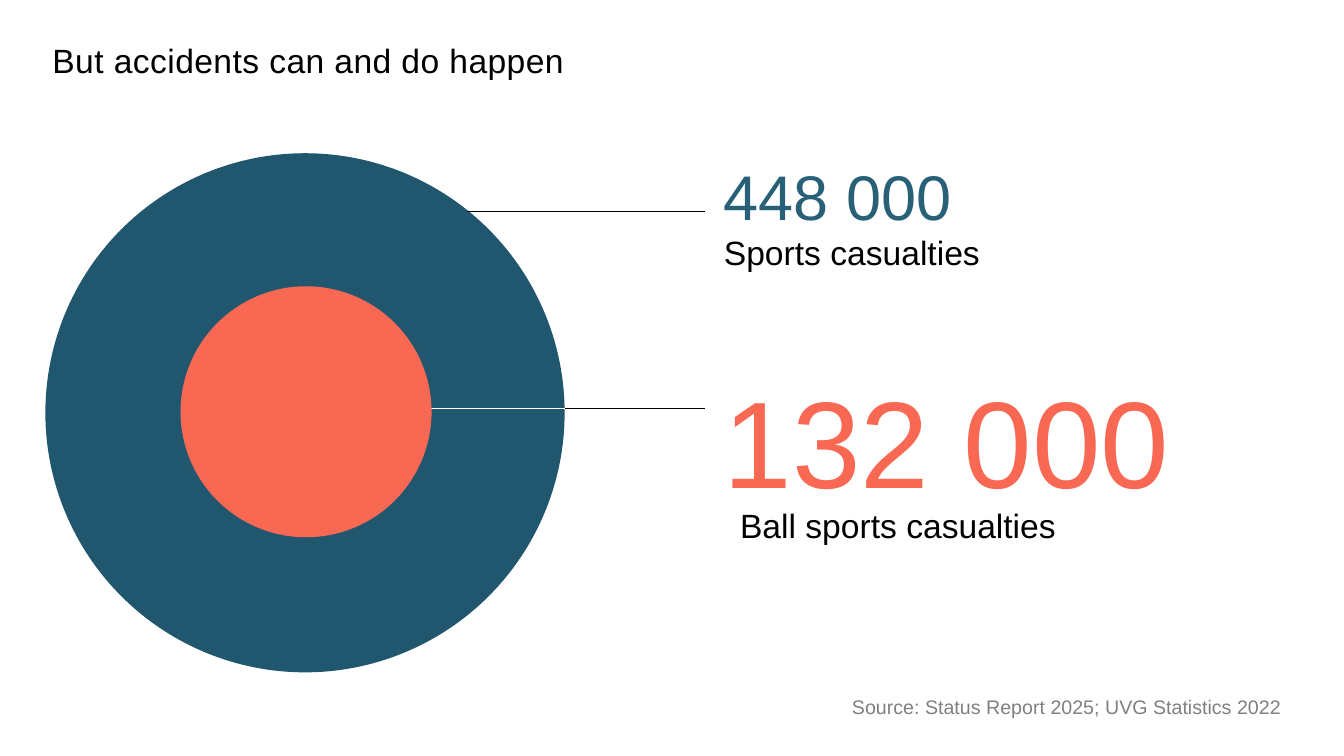
from lxml import etree
from pptx import Presentation
from pptx import util as u
from pptx.dml.color import RGBColor
from pptx.enum import shapes, text
from pptx.oxml.ns import qn

BLACK = RGBColor(0x00, 0x00, 0x00)
WHITE = RGBColor(0xFF, 0xFF, 0xFF)
GRAY = RGBColor(0x80, 0x80, 0x80)
TEAL = RGBColor(0x20, 0x56, 0x6E)
BLUE = RGBColor(0x28, 0x60, 0x78)
CORAL = RGBColor(0xF8, 0x68, 0x52)


class Canvas:
    font = "Arial"

    def __init__(self, slide):
        self.slide = slide

    def disc(self, left, top, size, color):
        disc = self.slide.shapes.add_shape(
            shapes.MSO_SHAPE.OVAL, u.Inches(left), u.Inches(top),
            u.Inches(size), u.Inches(size))
        disc.shadow.inherit = False
        disc.fill.solid()
        disc.fill.fore_color.rgb = color
        disc.line.fill.background()

    def rule(self, start, end, y, color):
        rule = self.slide.shapes.add_connector(
            shapes.MSO_CONNECTOR.STRAIGHT, u.Inches(start), u.Inches(y),
            u.Inches(end), u.Inches(y))
        rule.line.color.rgb = color
        rule.line.width = u.Pt(1)
        etree.SubElement(rule._element.spPr, qn("a:effectLst"))

    def label(self, words, left, top, width, height, size, color,
              lead=1.05, after=12, track=0):
        box = self.slide.shapes.add_textbox(
            u.Inches(left), u.Inches(top), u.Inches(width), u.Inches(height))
        frame = box.text_frame
        frame.text = words
        frame.word_wrap = True
        frame.vertical_anchor = text.MSO_ANCHOR.TOP
        frame.margin_left = frame.margin_right = 0
        frame.margin_top = frame.margin_bottom = 0
        line = frame.paragraphs[0]
        line.line_spacing = lead
        line.space_after = u.Pt(after)
        run = line.runs[0]
        run.font.name = self.font
        run.font.size = u.Pt(size)
        run.font.color.rgb = color
        if track:
            run._r.get_or_add_rPr().set("spc", str(track))


def main():
    deck = Presentation()
    deck.slide_width = u.Inches(13.33)
    deck.slide_height = u.Inches(7.5)
    page = Canvas(deck.slides.add_slide(deck.slide_layouts[6]))

    page.disc(0.45, 1.52, 5.15, TEAL)
    page.label("But accidents can and do happen", 0.52, 0.4, 12.28, 0.35,
               24, BLACK, lead=1.0, after=0, track=30)
    for start, end, y, color in (
            (4.63, 6.99, 2.1, BLACK),
            (5.6, 6.99, 4.05, BLACK),
            (3.07, 5.6, 4.05, WHITE)):
        page.rule(start, end, y, color)

    page.label("Ball sports casualties", 7.34, 4.99, 4.69, 0.41, 24, BLACK)
    page.label("132 000", 7.18, 3.55, 5.86, 1.52, 88, CORAL)
    page.label("Sports casualties", 7.18, 2.28, 3.16, 0.41, 24, BLACK)
    page.label("448 000", 7.18, 1.52, 3.3, 0.78, 45, BLUE)
    page.label("Source: Status Report 2025; UVG Statistics 2022",
               8.45, 6.88, 4.69, 0.24, 14, GRAY)
    page.disc(1.79, 2.84, 2.49, CORAL)

    deck.save("out.pptx")


if __name__ == "__main__":
    main()
